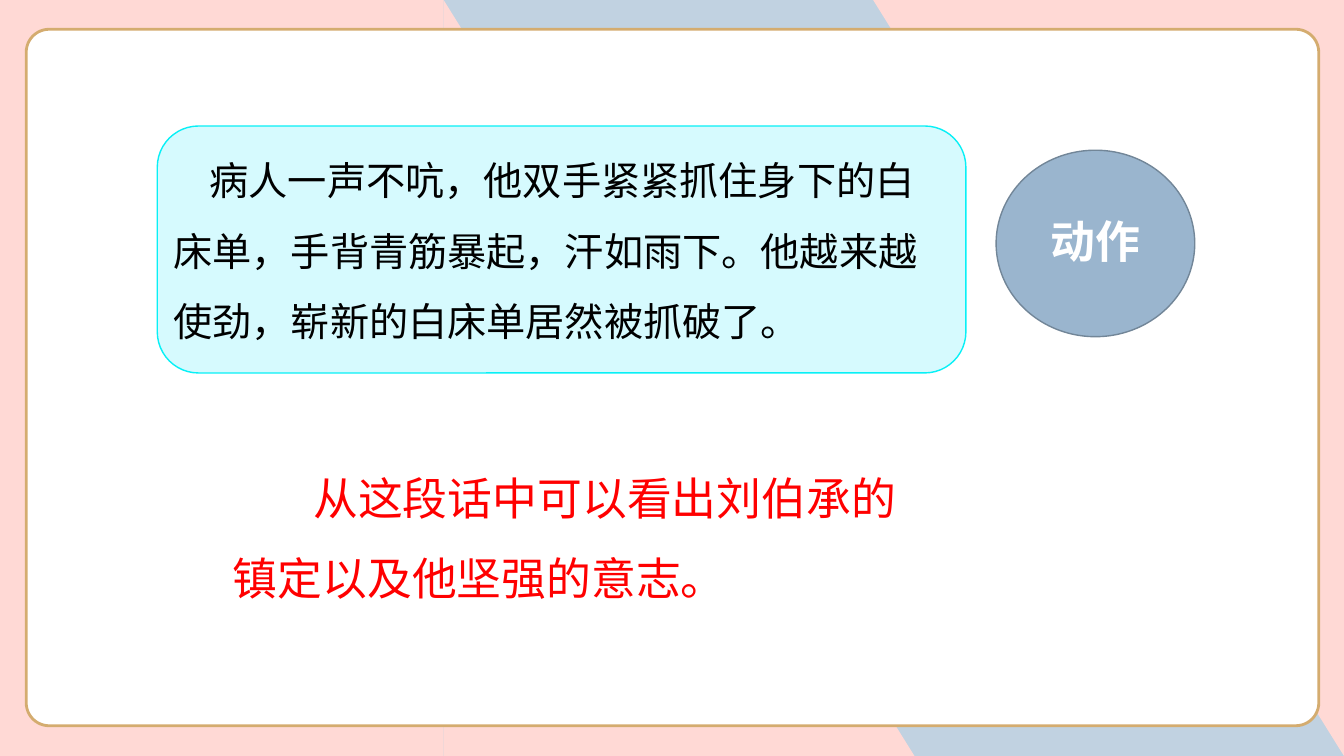
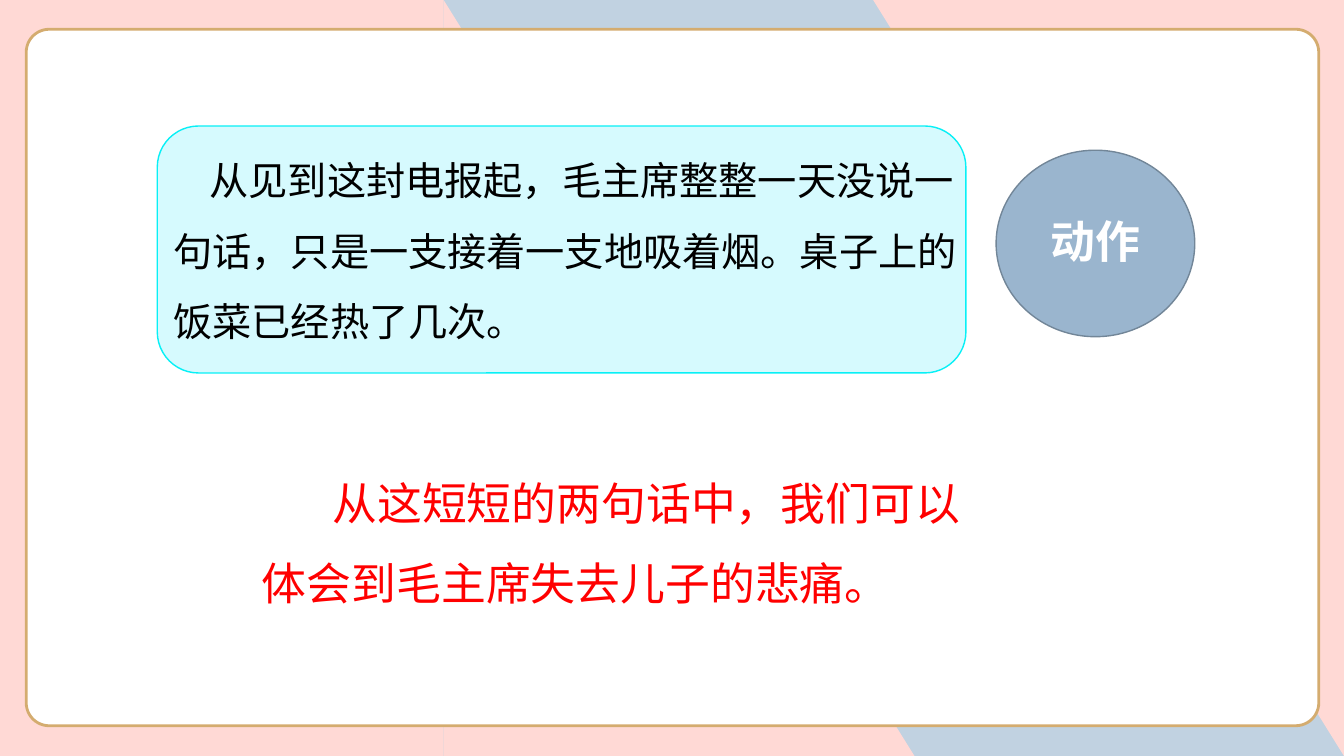
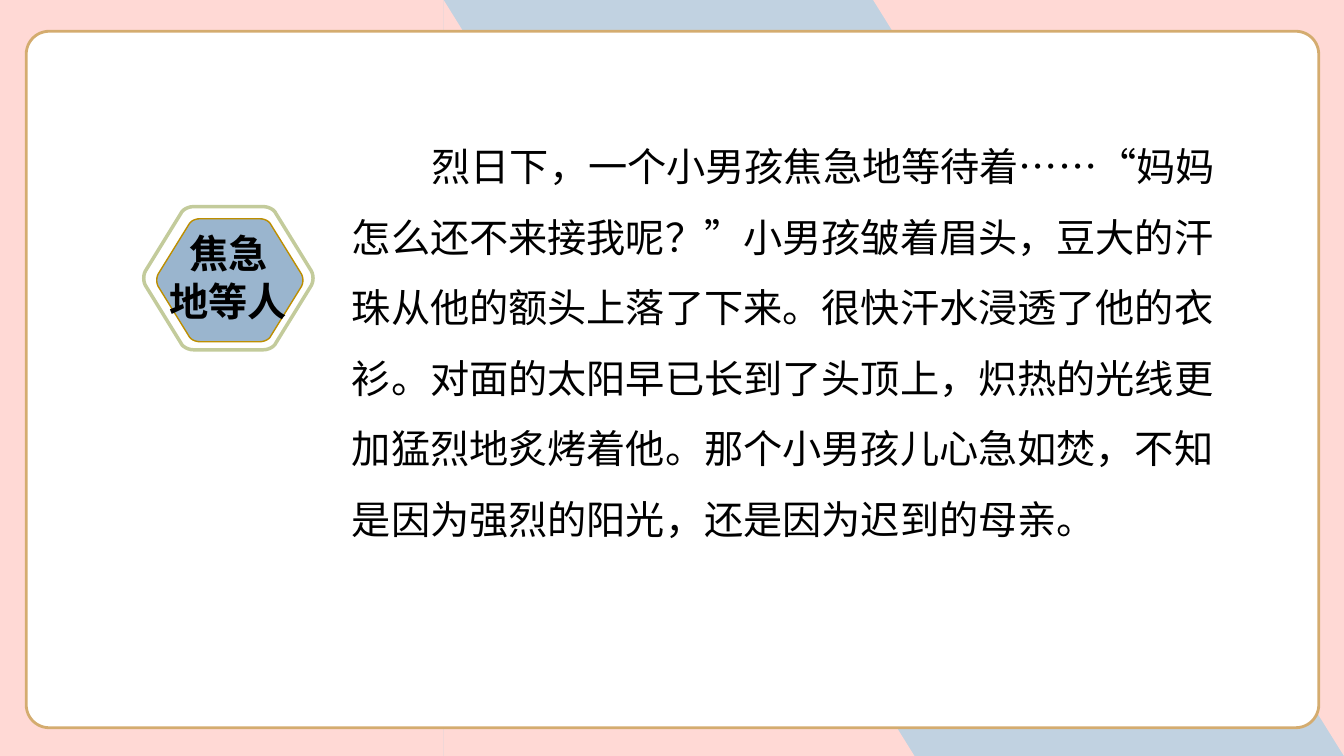
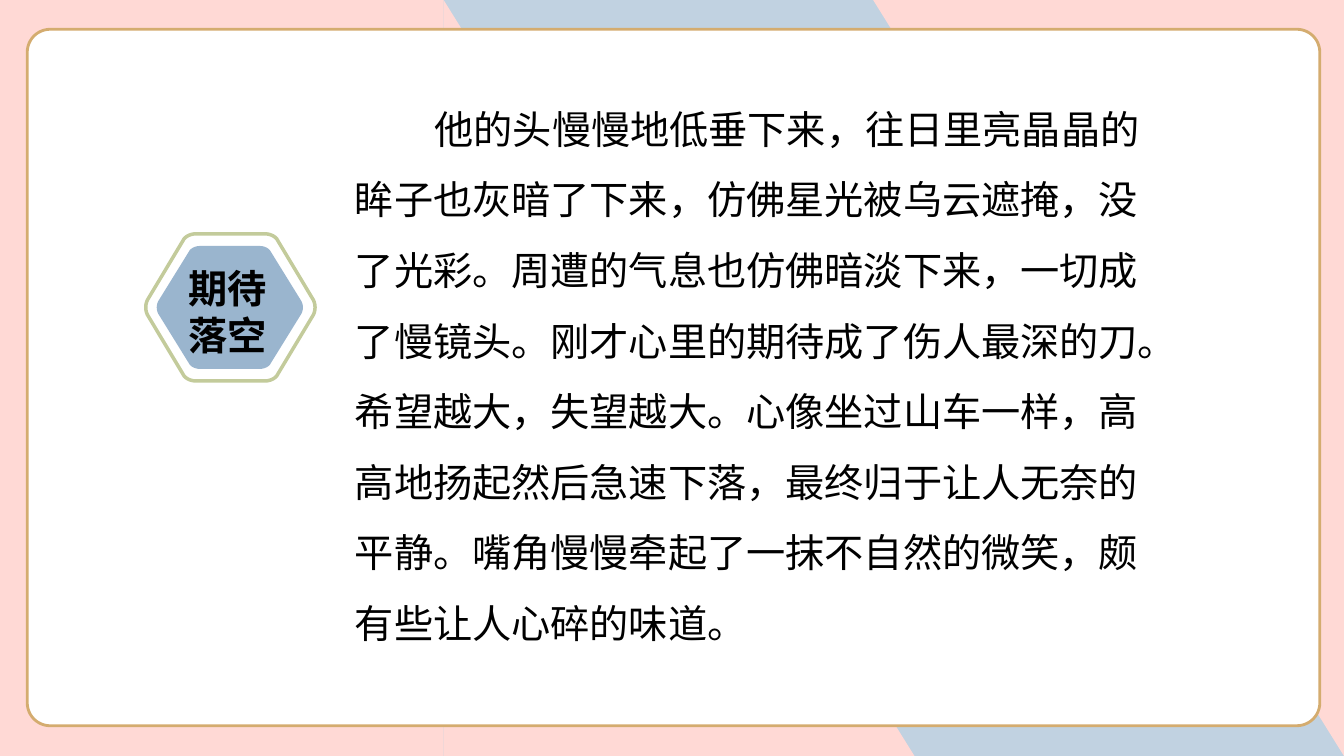
import dataclasses
from typing import Optional

import lxml.etree
import pptx
import pptx.dml.color
import pptx.enum.lang
import pptx.enum.shapes
import pptx.enum.text
import pptx.oxml.ns
import pptx.shapes.autoshape
import pptx.slide
import pptx.text.text
import pptx.util

Inches = pptx.util.Inches
RGBColor = pptx.dml.color.RGBColor
SHAPE = pptx.enum.shapes.MSO_SHAPE
ALIGN = pptx.enum.text.PP_ALIGN

# Colours and fonts
PINK = RGBColor(0xFF, 0xD9, 0xD5)
PALE_BLUE = RGBColor(0xC1, 0xD2, 0xE1)
BLUE = RGBColor(0x9A, 0xB5, 0xCE)
BLUE_EDGE = RGBColor(0x72, 0x86, 0x98)
GOLD = RGBColor(0xD4, 0xAC, 0x6F)
DARK_GOLD = RGBColor(0xBD, 0x8E, 0x00)
GREEN = RGBColor(0xC3, 0xCB, 0x9B)
CYAN = RGBColor(0x08, 0xF0, 0xF6)
PALE_CYAN = RGBColor(0xD6, 0xFA, 0xFE)
RED = RGBColor(0xFF, 0x00, 0x00)
WHITE = RGBColor(0xFF, 0xFF, 0xFF)
BLACK = RGBColor(0x00, 0x00, 0x00)
SANS = "Noto Sans CJK SC"
SERIF = "Times New Roman"

# Line pitch as a multiple of the text size
TIGHT = 1.2
OPEN = 1.8

# Rounded hexagon corners: Bezier points as fractions of width and height
TOP_RIGHT = [(0.705, 0), (0.735, 0), (0.77, 0.02), (0.78, 0.05)]
RIGHT = [(0.987, 0.45), (1, 0.48), (1, 0.52), (0.987, 0.55)]
BOTTOM_RIGHT = [(x, 1 - y) for x, y in reversed(TOP_RIGHT)]
CURVE_STEPS = 6


@dataclasses.dataclass(frozen=True)
class Box:
    left: float
    top: float
    width: float
    height: float

    def lengths(self) -> tuple:
        return tuple(Inches(value) for value in dataclasses.astuple(self))


@dataclasses.dataclass(frozen=True)
class QuoteSlide:
    """A quoted passage, its label in a circle and a conclusion below."""
    passage: str
    passage_box: Box
    label_box: Box
    conclusion: str
    conclusion_box: Box
    conclusion_indent: float


@dataclasses.dataclass(frozen=True)
class ExampleSlide:
    """A long example passage beside a hexagon label."""
    card: Box
    label: str
    label_box: Box
    label_align: ALIGN
    outer: Box
    inner: Box
    inner_line: Optional[RGBColor]
    passage: str
    passage_box: Box


CARD = Box(0.26, 0.29, 12.82, 6.91)

QUOTES = [
    QuoteSlide(
        "病人一声不吭，他双手紧紧抓住身下的白床单，手背青筋暴起，汗如雨下。"
        "他越来越使劲，崭新的白床单居然被抓破了。",
        Box(1.62, 1.27, 7.89, 2.2), Box(10.32, 2.07, 1.23, 0.63),
        "从这段话中可以看出刘伯承的\n镇定以及他坚强的意志。",
        Box(2.21, 4.35, 7.23, 1.7), 0.8),
    QuoteSlide(
        "从见到这封电报起，毛主席整整一天没说一句话，只是一支接着一支地吸着烟。"
        "桌子上的饭菜已经热了几次。",
        Box(1.62, 1.27, 8.24, 2.22), Box(10.32, 2.07, 1.41, 0.63),
        "从这短短的两句话中，我们可以体会到毛主席失去儿子的悲痛。",
        Box(2.5, 4.4, 7.14, 1.7), 0.7),
]

EXAMPLES = [
    ExampleSlide(
        Box(0.26, 0.31, 12.82, 6.91),
        "焦急\n地等人", Box(1.5, 2.23, 1.53, 1.03), ALIGN.CENTER,
        Box(1.42, 2.05, 1.69, 1.42), Box(1.55, 2.17, 1.46, 1.22), DARK_GOLD,
        "烈日下，一个小男孩焦急地等待着……“妈妈怎么还不来接我呢？”小男孩皱着眉头，"
        "豆大的汗珠从他的额头上落了下来。很快汗水浸透了他的衣衫。"
        "对面的太阳早已长到了头顶上，炽热的光线更加猛烈地炙烤着他。"
        "那个小男孩儿心急如焚，不知是因为强烈的阳光，还是因为迟到的母亲。",
        Box(3.39, 1.13, 9.08, 4.3)),
    ExampleSlide(
        Box(0.27, 0.29, 12.82, 6.91),
        "期待\n落空", Box(1.77, 2.57, 1.25, 1.03), ALIGN.LEFT,
        Box(1.44, 2.32, 1.69, 1.46), Box(1.55, 2.44, 1.46, 1.22), None,
        "他的头慢慢地低垂下来，往日里亮晶晶的眸子也灰暗了下来，仿佛星光被乌云遮掩，"
        "没了光彩。周遭的气息也仿佛暗淡下来，一切成了慢镜头。"
        "刚才心里的期待成了伤人最深的刀。希望越大，失望越大。"
        "心像坐过山车一样，高高地扬起然后急速下落，最终归于让人无奈的平静。"
        "嘴角慢慢牵起了一抹不自然的微笑，颇有些让人心碎的味道。",
        Box(3.42, 0.76, 8.21, 5.75)),
]


def paint(shape: pptx.shapes.autoshape.Shape, fill: Optional[RGBColor],
          line: Optional[RGBColor], line_width: float) -> None:
    shape.shadow.inherit = False
    if fill is None:
        shape.fill.background()
    else:
        shape.fill.solid()
        shape.fill.fore_color.rgb = fill
    if line is None:
        shape.line.fill.background()
    else:
        shape.line.color.rgb = line
        shape.line.width = pptx.util.Pt(line_width)


def add_box(slide: pptx.slide.Slide, kind: SHAPE, box: Box, fill: RGBColor,
            line: Optional[RGBColor] = None, line_width: float = 1,
            ) -> pptx.shapes.autoshape.Shape:
    shape = slide.shapes.add_shape(kind, *box.lengths())
    paint(shape, fill, line, line_width)
    return shape


def curve_points(curve: list) -> list:
    """Points along a cubic Bezier curve."""
    points = []
    for step in range(CURVE_STEPS + 1):
        t = step / CURVE_STEPS
        weights = ((1 - t) ** 3, 3 * t * (1 - t) ** 2, 3 * t * t * (1 - t), t ** 3)
        points.append(tuple(sum(weight * point[axis] for weight, point in zip(weights, curve))
                            for axis in (0, 1)))
    return points


def add_hexagon(slide: pptx.slide.Slide, box: Box, fill: Optional[RGBColor] = None,
                line: Optional[RGBColor] = None, line_width: float = 1) -> None:
    half = [point for corner in (TOP_RIGHT, RIGHT, BOTTOM_RIGHT)
            for point in curve_points(corner)]
    outline = half + [(1 - x, 1 - y) for x, y in half]
    points = [(Inches(box.left + x * box.width), Inches(box.top + y * box.height))
              for x, y in outline]
    builder = slide.shapes.build_freeform(*points[0])
    builder.add_line_segments(points[1:], close=True)
    paint(builder.convert_to_shape(), fill, line, line_width)


def write_text(shape: pptx.shapes.autoshape.Shape, text: str, *, size: float = 28,
               font: str = SANS, color: RGBColor = BLACK, bold: bool = False,
               align: ALIGN = ALIGN.LEFT, pitch: float = OPEN,
               indent: float = 0) -> None:
    """Fill a shape with text; only the first paragraph is indented."""
    frame = shape.text_frame
    frame.word_wrap = True
    frame.auto_size = pptx.enum.text.MSO_AUTO_SIZE.NONE
    frame.vertical_anchor = pptx.enum.text.MSO_ANCHOR.TOP
    for number, line in enumerate(text.split("\n")):
        paragraph = frame.add_paragraph() if number else frame.paragraphs[0]
        format_paragraph(paragraph, align, size * pitch, 0 if number else indent)
        run = paragraph.add_run()
        run.text = line
        run.font.size = pptx.util.Pt(size)
        run.font.bold = bold
        run.font.color.rgb = color
        run.font.name = font
        run.font.language_id = pptx.enum.lang.MSO_LANGUAGE_ID.SIMPLIFIED_CHINESE
        east_asian = lxml.etree.SubElement(run._r.get_or_add_rPr(), pptx.oxml.ns.qn("a:ea"))
        east_asian.set("typeface", SANS)


def format_paragraph(paragraph: pptx.text.text._Paragraph, align: ALIGN,
                     line_points: float, indent: float) -> None:
    paragraph.alignment = align
    paragraph.line_spacing = pptx.util.Pt(line_points)
    paragraph.space_before = pptx.util.Pt(0)
    properties = paragraph._p.get_or_add_pPr()
    properties.set("marL", "0")
    properties.set("indent", str(Inches(indent)))
    lxml.etree.SubElement(properties, pptx.oxml.ns.qn("a:buNone"))


def place_on_top(slide: pptx.slide.Slide, index: int, box: Box,
                 ) -> pptx.shapes.autoshape.Shape:
    """Move a placeholder to its box and in front of the shapes drawn so far."""
    placeholder = slide.placeholders[index]
    (placeholder.left, placeholder.top,
     placeholder.width, placeholder.height) = box.lengths()
    slide.shapes.element.append(placeholder.element)
    return placeholder


def add_base_slide(presentation: pptx.presentation.Presentation, card: Box,
                   ) -> pptx.slide.Slide:
    """A slide with the diagonal bands and the white card."""
    slide = presentation.slides.add_slide(presentation.slide_layouts[1])
    upper = add_box(slide, SHAPE.RIGHT_TRIANGLE, Box(8.66, 0, 4.67, 7.5), PINK)
    upper.rotation = 180
    add_box(slide, SHAPE.RIGHT_TRIANGLE, Box(4.4, 0, 4.67, 7.5), PINK)
    add_box(slide, SHAPE.RECTANGLE, Box(0, 0, 4.4, 7.5), PINK)
    panel = add_box(slide, SHAPE.ROUNDED_RECTANGLE, card, WHITE, GOLD, 2)
    panel.adjustments[0] = 0.033
    return slide


def add_quote_slide(presentation: pptx.presentation.Presentation,
                    quote: QuoteSlide) -> None:
    slide = add_base_slide(presentation, CARD)
    # Quoted passage
    add_box(slide, SHAPE.ROUNDED_RECTANGLE, Box(1.56, 1.25, 8.02, 2.45), PALE_CYAN, CYAN)
    write_text(place_on_top(slide, 1, quote.passage_box), quote.passage, indent=0.36)
    # Label
    add_box(slide, SHAPE.OVAL, Box(9.88, 1.49, 1.97, 1.85), BLUE, BLUE_EDGE)
    write_text(place_on_top(slide, 0, quote.label_box), "动作",
               size=32, color=WHITE, bold=True, pitch=TIGHT)
    # Conclusion
    conclusion = slide.shapes.add_textbox(*quote.conclusion_box.lengths())
    write_text(conclusion, quote.conclusion, size=32, font=SERIF, color=RED,
               indent=quote.conclusion_indent)


def add_example_slide(presentation: pptx.presentation.Presentation,
                      example: ExampleSlide) -> None:
    slide = add_base_slide(presentation, example.card)
    # Label
    add_hexagon(slide, example.outer, line=GREEN, line_width=2.5)
    add_hexagon(slide, example.inner, fill=BLUE, line=example.inner_line)
    write_text(place_on_top(slide, 0, example.label_box), example.label,
               bold=True, align=example.label_align, pitch=TIGHT)
    # Passage
    write_text(place_on_top(slide, 1, example.passage_box), example.passage, indent=0.79)


def main() -> None:
    presentation = pptx.Presentation()
    presentation.slide_width = Inches(13.33)
    presentation.slide_height = Inches(7.5)
    background = presentation.slide_master.background.fill
    background.solid()
    background.fore_color.rgb = PALE_BLUE
    for quote in QUOTES:
        add_quote_slide(presentation, quote)
    for example in EXAMPLES:
        add_example_slide(presentation, example)
    presentation.save("out.pptx")


if __name__ == "__main__":
    main()
